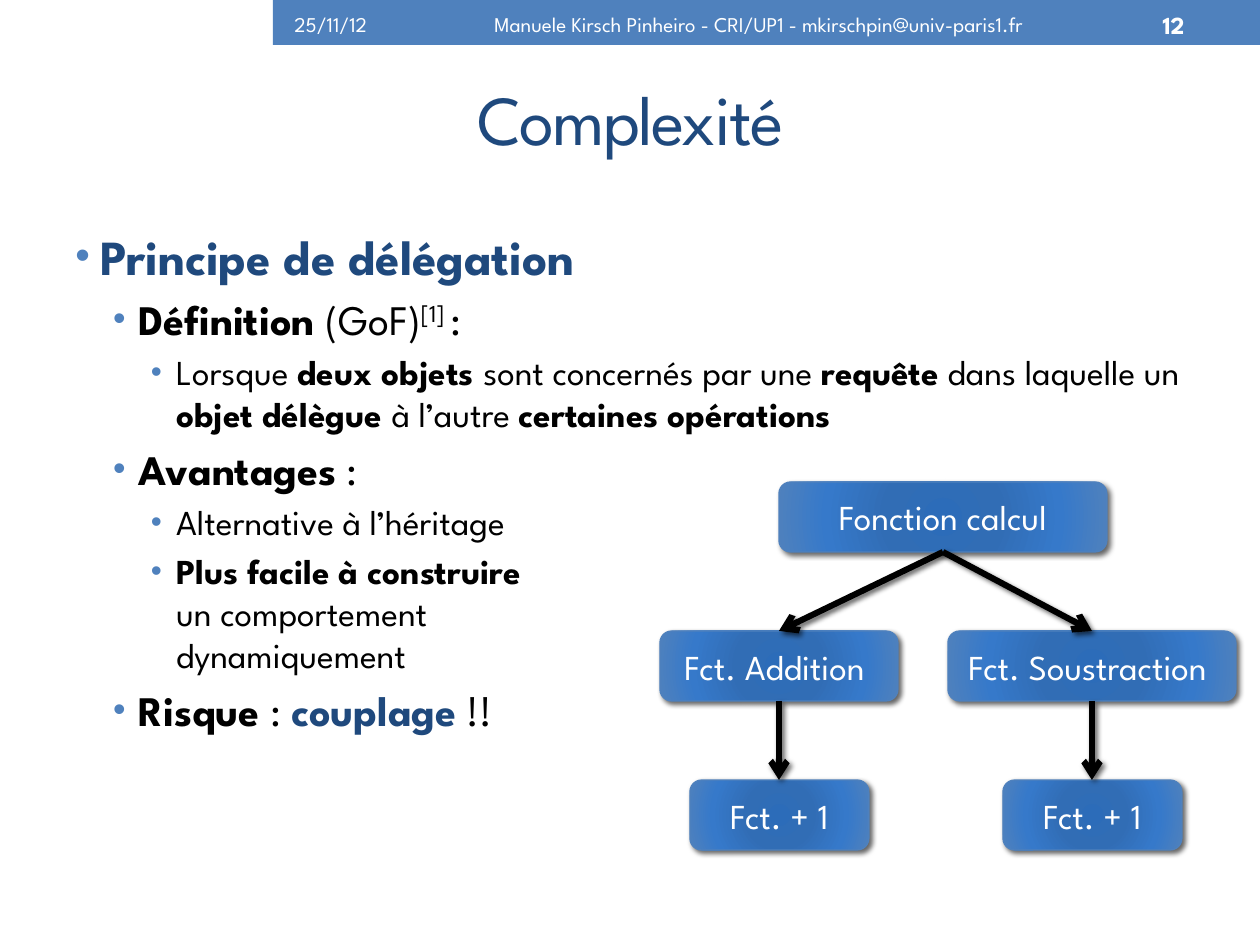
import pptx
import pptx.util
import pptx.oxml
import pptx.oxml.ns
import pptx.dml.color
import pptx.enum.shapes
import pptx.enum.text

PX = 914400 // 126
FONT = "League Spartan"
BLUE, NAVY, WHITE, BLACK = "4F81BD", "1F497D", "FFFFFF", "000000"
NS = pptx.oxml.ns.nsdecls("a")
SHAPE = pptx.enum.shapes.MSO_SHAPE
ALIGN = pptx.enum.text.PP_ALIGN
ANCHOR = pptx.enum.text.MSO_ANCHOR
STOPS = [(0, "2C6CB9"), (34, "316DB5"), (70, "3679CA"), (100, BLUE)]
BODY = [
    (0, 28, [("Principe de délégation", "bn")]),
    (1, 24, [("Définition", "b"), (" (GoF)", ""), ("[1] ", "s"), (":", "")]),
    (2, 20, [("Lorsque ", ""), ("deux objets ", "b"),
             ("sont concernés par une ", ""), ("requête", "b"),
             (" dans laquelle un ", ""), ("objet délègue ", "b"),
             ("à l’autre ", ""), ("certaines opérations", "b")]),
    (1, 24, [("Avantages", "b"), (" :", "")]),
    (2, 20, [("Alternative à l’héritage", "")]),
    (2, 20, [("Plus facile à construire \n", "b"),
             ("un comportement \ndynamiquement", "")]),
    (1, 24, [("Risque", "b"), (" : ", ""), ("couplage", "bn"), (" !!", "")]),
]


def emu(*px):
    return [v * PX for v in px]


def color(hex_):
    return pptx.dml.color.RGBColor.from_string(hex_)


def xml(text):
    return pptx.oxml.parse_xml(text)


def add_text(p, text, size=20, fill=BLACK, bold=False, spacing=0, baseline=0):
    for i, part in enumerate(text.split("\n")):
        if i:
            p.add_line_break()
        if not part:
            continue
        r = p.add_run()
        r.text = part
        r.font.name = FONT
        r.font.size = pptx.util.Pt(size)
        r.font.bold = bold
        r.font.color.rgb = color(fill)
        if spacing:
            r.font._element.set("spc", str(spacing * 100))
        if baseline:
            r.font._element.set("baseline", str(baseline * 1000))


def add_box(s, x, y, w, h, anchor=ANCHOR.MIDDLE):
    tf = s.shapes.add_textbox(*emu(x, y, w, h)).text_frame
    tf.word_wrap = True
    tf.vertical_anchor = anchor
    return tf


def add_label(s, x, y, w, h, text, align, **fmt):
    p = add_box(s, x, y, w, h).paragraphs[0]
    p.alignment = align
    add_text(p, text, **fmt)


def add_shadow(sp):
    sp._element.spPr.append(xml(
        f'<a:effectLst {NS}><a:outerShdw blurRad="38100" dist="25400" '
        'dir="2700000" rotWithShape="0"><a:srgbClr val="000000">'
        '<a:alpha val="60000"/></a:srgbClr></a:outerShdw></a:effectLst>'))


def add_bullet(p, level):
    pPr = p._p.get_or_add_pPr()
    pPr.set("marL", str(int((0.2 + 0.3 * level) * 914400)))
    pPr.set("indent", "-182880")
    percent = 90 if level == 2 else 85
    for child in (f'<a:buClr {NS}><a:srgbClr val="{BLUE}"/></a:buClr>',
                  f'<a:buSzPct {NS} val="{percent * 1000}"/>',
                  f'<a:buFont {NS} typeface="Arial"/>',
                  f'<a:buChar {NS} char="•"/>'):
        pPr.append(xml(child))


def add_body(s):
    tf = add_box(s, 63, 220, 1134, 672, ANCHOR.TOP)
    for i, (level, size, runs) in enumerate(BODY):
        p = tf.add_paragraph() if i else tf.paragraphs[0]
        p.level = level
        add_bullet(p, level)
        p.space_before = pptx.util.Pt(size * 0.2 if i else 0)
        for text, style in runs:
            add_text(p, text, size, NAVY if "n" in style else BLACK,
                     bold="b" in style, baseline=30 if "s" in style else 0)


def add_node(s, cx, y, w, text):
    sp = s.shapes.add_shape(SHAPE.ROUNDED_RECTANGLE, *emu(cx - w // 2, y, w, 70))
    stops = "".join(f'<a:gs pos="{pos * 1000}"><a:srgbClr val="{c}"/></a:gs>'
                    for pos, c in STOPS)
    sp._element.spPr.insert(2, xml(
        f'<a:gradFill {NS} rotWithShape="1"><a:gsLst>{stops}</a:gsLst>'
        '<a:path path="circle"><a:fillToRect l="100000" t="100000" '
        'r="100000" b="100000"/></a:path></a:gradFill>'))
    sp.line.color.rgb = color(BLUE)
    sp.line.width = pptx.util.Pt(0.75)
    add_shadow(sp)
    tf = sp.text_frame
    tf.margin_left = tf.margin_right = tf.margin_top = tf.margin_bottom = 0
    tf.vertical_anchor = ANCHOR.MIDDLE
    p = tf.paragraphs[0]
    p.alignment = ALIGN.CENTER
    add_text(p, text, fill=WHITE)


def add_arrow(s, x1, y1, x2, y2):
    line = s.shapes.add_connector(pptx.enum.shapes.MSO_CONNECTOR.STRAIGHT,
                                  *emu(x1, y1, x2, y2))
    line.line.color.rgb = color(BLACK)
    line.line.width = pptx.util.Pt(3.5)
    line.line._get_or_add_ln().append(xml(f'<a:tailEnd {NS} type="arrow"/>'))
    add_shadow(line)


def add_header(s):
    bar = s.shapes.add_shape(SHAPE.RECTANGLE, *emu(273, 0, 987, 45))
    bar.shadow.inherit = False
    bar.fill.solid()
    bar.fill.fore_color.rgb = color(BLUE)
    bar.line.fill.background()
    add_label(s, 282, 3, 139, 43, "25/11/12", ALIGN.LEFT, size=12, fill=WHITE)
    add_label(s, 402, 3, 714, 43,
              "Manuele Kirsch Pinheiro - CRI/UP1 - mkirschpin@univ-paris1.fr",
              ALIGN.CENTER, size=12, fill=WHITE)
    add_label(s, 1126, 3, 71, 43, "12", ALIGN.RIGHT, size=14, fill=WHITE, bold=True)


def add_diagram(s):
    root, rows = 943, (482, 631, 780)
    add_node(s, root, rows[0], 328, "Fonction calcul")
    for cx, w, text in ((779, 238, "Fct. Addition "),
                        (1092, 288, "Fct. Soustraction ")):
        add_node(s, cx, rows[1], w, text)
        add_node(s, cx, rows[2], 179, "Fct. + 1")
        add_arrow(s, root, rows[0] + 70, cx, rows[1])
        add_arrow(s, cx, rows[1] + 70, cx, rows[2])


def main():
    prs = pptx.Presentation()
    prs.slide_width, prs.slide_height = emu(1260, 945)
    s = prs.slides.add_slide(prs.slide_layouts[6])
    add_header(s)
    add_label(s, 64, 55, 1133, 126, "Complexité", ALIGN.CENTER,
              size=40, fill=NAVY, spacing=-1)
    add_body(s)
    add_diagram(s)
    prs.save("out.pptx")


if __name__ == "__main__":
    main()
